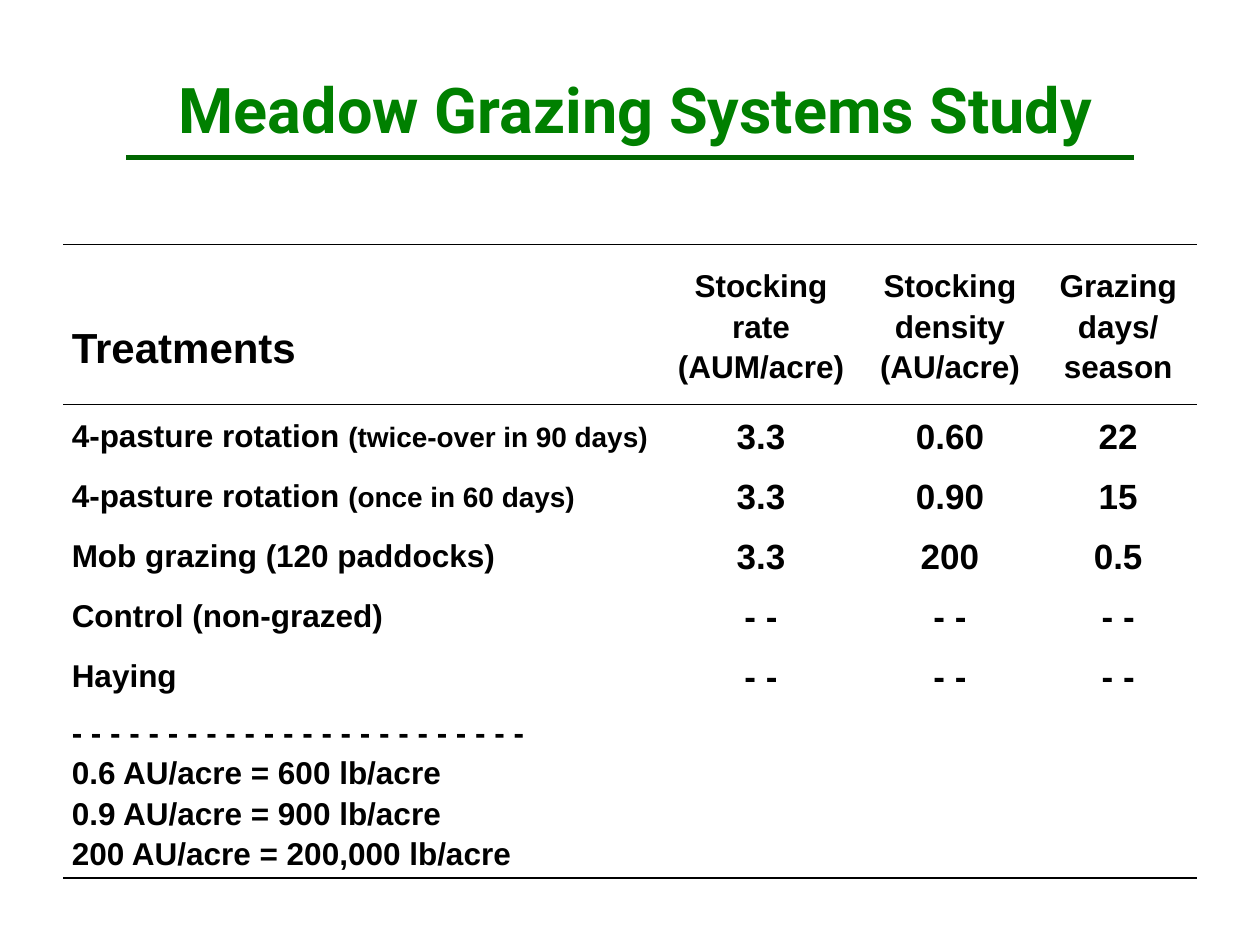
from dataclasses import dataclass

from lxml import etree
from pptx import Presentation
from pptx.dml.color import RGBColor
from pptx.enum.shapes import MSO_CONNECTOR
from pptx.enum.text import MSO_ANCHOR, PP_ALIGN
from pptx.oxml.ns import qn
from pptx.util import Inches, Pt

STRAIGHT = MSO_CONNECTOR.STRAIGHT
MIDDLE = MSO_ANCHOR.MIDDLE
LEFT, CENTER = PP_ALIGN.LEFT, PP_ALIGN.CENTER

WIDTH, HEIGHT = Inches(10), Inches(7.5)
COLORS = {"title": "008000", "rule": "006600", "text": "000000"}
BODY_FONT, TITLE_FONT = "Arial", "Roboto"
COLUMN_SHARES = (0.475, 0.158, 0.142, 0.125)
SPACER_ROW, HEADER_ROW, BODY_ROW, NOTE_ROW = (Inches(h) for h in (0.4, 1.27, 0.476, 1.37))
CELL_MARGIN = Inches(0.07)
HEADER_DROP = Inches(0.33)
BORDER_SIDES = ("L", "R", "T", "B")


@dataclass(frozen=True)
class Treatment:
    name: str
    detail: str
    values: tuple[str, str, str]


@dataclass(frozen=True)
class Rule:
    start: float
    end: float
    level: float


HEADERS = ("Stocking rate (AUM/acre)", "Stocking density (AU/acre)", "Grazing days/ season")
NO_VALUES = ("- -",) * 3
TREATMENTS = (
    Treatment("4-pasture rotation ", "(twice-over in 90 days)", ("3.3", "0.60", "22")),
    Treatment("4-pasture rotation ", "(once in 60 days)", ("3.3", "0.90", "15")),
    Treatment("Mob grazing (120 paddocks)", "", ("3.3", "200", "0.5")),
    Treatment("Control (non-grazed)", "", NO_VALUES),
    Treatment("Haying", "", NO_VALUES),
)
NOTES = (
    "- - - - - - - - - - - - - - - - - - - - - - - -",
    "0.6 AU/acre = 600 lb/acre",
    "0.9 AU/acre = 900 lb/acre",
    "200 AU/acre = 200,000 lb/acre",
)
RULES = (Rule(0.108, 0.9, 1.25 / 7.5), Rule(0.1, 0.892, 1.25 / 7.5))


def write_text(paragraph, text: str, *, size: float, color: str = "text",
               font: str = BODY_FONT, align=LEFT, spacing: float = 1.15) -> None:
    paragraph.alignment = align
    paragraph.line_spacing = spacing
    run = paragraph.add_run()
    run.text = text
    run.font.name = font
    run.font.size = Pt(size)
    run.font.bold = True
    run.font.color.rgb = RGBColor.from_string(COLORS[color])


def format_cell(cell, lined: str) -> None:
    cell.vertical_anchor = MIDDLE
    cell.margin_left = cell.margin_right = CELL_MARGIN
    cell.margin_top = cell.margin_bottom = 0
    properties = cell._tc.get_or_add_tcPr()
    for side in BORDER_SIDES:
        border = etree.SubElement(properties, qn(f"a:ln{side}"), w=str(Pt(1)))
        if side in lined:
            fill = etree.SubElement(border, qn("a:solidFill"))
            etree.SubElement(fill, qn("a:srgbClr"), val=COLORS["text"])
        else:
            etree.SubElement(border, qn("a:noFill"))
    cell.fill.background()


def draw_title(slide) -> None:
    box = slide.shapes.add_textbox(round(WIDTH * 0.067), round(HEIGHT * 0.068),
                                   round(WIDTH * 0.875), round(HEIGHT * 0.095))
    box.text_frame.word_wrap = True
    write_text(box.text_frame.paragraphs[0], "Meadow Grazing Systems Study", size=36,
               color="title", font=TITLE_FONT, align=CENTER, spacing=1.0)


def draw_rule(slide, rule: Rule) -> None:
    level = round(HEIGHT * rule.level)
    line = slide.shapes.add_connector(STRAIGHT, round(WIDTH * rule.start), level,
                                      round(WIDTH * rule.end), level)
    line.line.color.rgb = RGBColor.from_string(COLORS["rule"])
    line.line.width = Pt(3)
    etree.SubElement(line._element.spPr, qn("a:effectLst"))


def draw_table(slide) -> None:
    heights = (SPACER_ROW, HEADER_ROW, *(BODY_ROW for _ in TREATMENTS), NOTE_ROW)
    table = slide.shapes.add_table(len(heights), len(COLUMN_SHARES), round(WIDTH * 0.05),
                                   Inches(1.54), round(WIDTH * sum(COLUMN_SHARES)),
                                   sum(heights)).table
    table.first_row = table.horz_banding = False
    for column, share in zip(table.columns, COLUMN_SHARES):
        column.width = round(WIDTH * share)
    last = len(heights) - 1
    borders = {0: "B", 1: "TB", 2: "T", last: "B"}
    for index, height in enumerate(heights):
        table.rows[index].height = height
        for cell in table.rows[index].cells:
            format_cell(cell, borders.get(index, ""))
    for index in (0, last):
        table.cell(index, 0).merge(table.cell(index, len(COLUMN_SHARES) - 1))

    heading = table.cell(1, 0)
    heading.margin_top = HEADER_DROP
    write_text(heading.text_frame.paragraphs[0], "Treatments", size=24)
    for column, text in enumerate(HEADERS, 1):
        write_text(table.cell(1, column).text_frame.paragraphs[0], text, size=18, align=CENTER)

    for row, treatment in enumerate(TREATMENTS, 2):
        paragraph = table.cell(row, 0).text_frame.paragraphs[0]
        write_text(paragraph, treatment.name, size=18)
        if treatment.detail:
            write_text(paragraph, treatment.detail, size=16)
        for column, value in enumerate(treatment.values, 1):
            write_text(table.cell(row, column).text_frame.paragraphs[0], value,
                       size=20, align=CENTER)

    frame = table.cell(last, 0).text_frame
    for index, note in enumerate(NOTES):
        paragraph = frame.add_paragraph() if index else frame.paragraphs[0]
        write_text(paragraph, note, size=18)


def main() -> None:
    presentation = Presentation()
    presentation.slide_width, presentation.slide_height = WIDTH, HEIGHT
    slide = presentation.slides.add_slide(presentation.slide_layouts[6])
    draw_title(slide)
    draw_table(slide)
    for rule in RULES:
        draw_rule(slide, rule)
    presentation.save("out.pptx")


if __name__ == "__main__":
    main()
